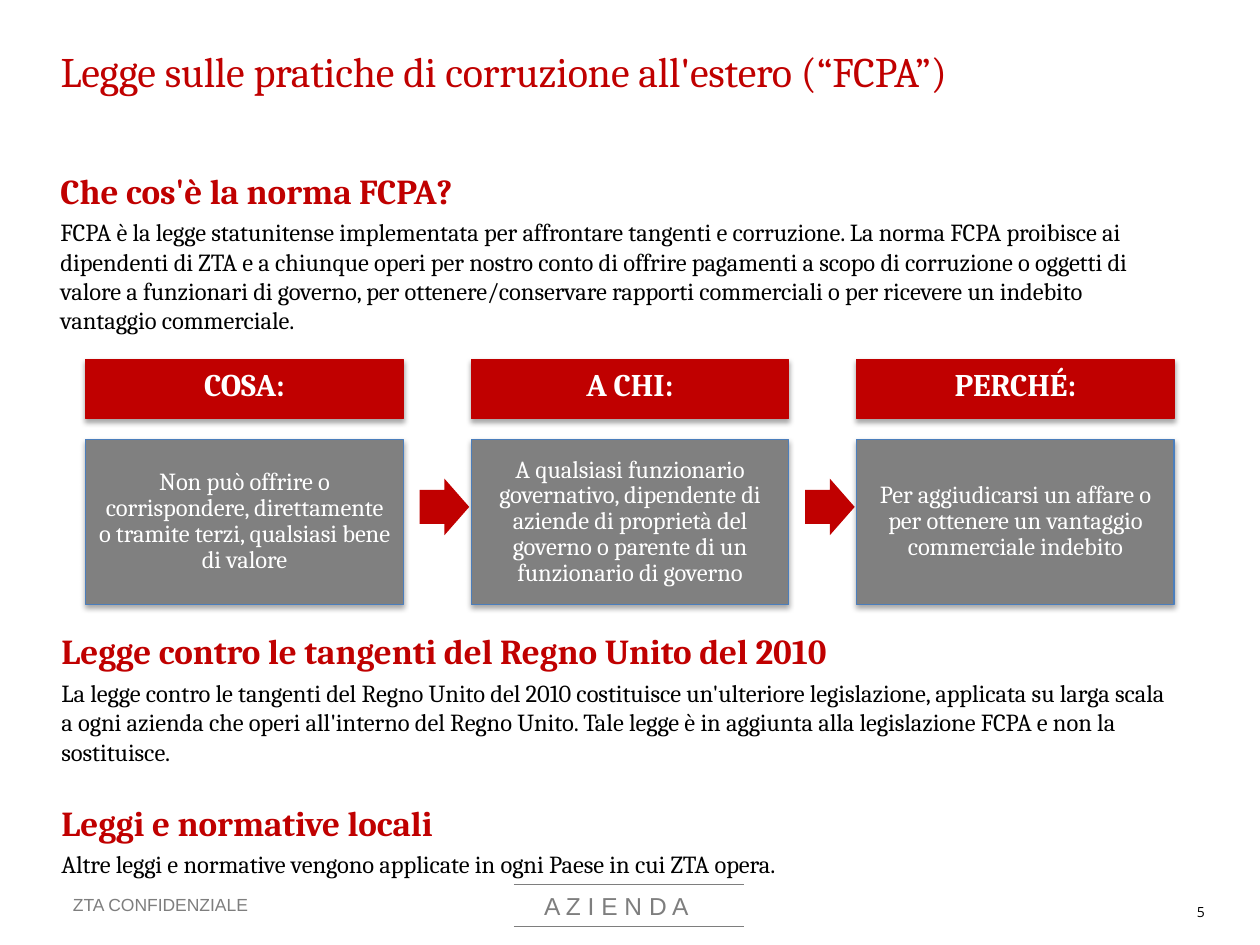
"""Build the slide on the FCPA and related anti-corruption laws."""
from lxml import etree
from pptx import Presentation
from pptx.dml.color import RGBColor
from pptx.enum.shapes import MSO_CONNECTOR as Connector, MSO_SHAPE as Shape
from pptx.enum.text import MSO_ANCHOR as Anchor, PP_ALIGN as Align
from pptx.oxml import parse_xml
from pptx.oxml.ns import nsdecls, qn
from pptx.util import Cm, Pt

RED = RGBColor(0xC0, 0x00, 0x00)
GREY = RGBColor(0x80, 0x80, 0x80)
FOOTER_GREY = RGBColor(0x7E, 0x7E, 0x7E)
BLUE = RGBColor(0x4B, 0x7E, 0xBC)
BLACK = RGBColor(0x00, 0x00, 0x00)
WHITE = RGBColor(0xFF, 0xFF, 0xFF)

TITLE = "Legge sulle pratiche di corruzione all'estero (“FCPA”)"
FCPA_SECTION = [
    ("Che cos'è la norma FCPA?",
     "FCPA è la legge statunitense implementata per affrontare tangenti e corruzione. "
     "La norma FCPA proibisce ai dipendenti di ZTA e a chiunque operi per nostro conto di "
     "offrire pagamenti a scopo di corruzione o oggetti di valore a funzionari di governo, "
     "per ottenere/conservare rapporti commerciali o per ricevere un indebito vantaggio "
     "commerciale."),
]
OTHER_SECTIONS = [
    ("Legge contro le tangenti del Regno Unito del 2010",
     "La legge contro le tangenti del Regno Unito del 2010 costituisce un'ulteriore "
     "legislazione, applicata su larga scala a ogni azienda che operi all'interno del Regno "
     "Unito. Tale legge è in aggiunta alla legislazione FCPA e non la sostituisce."),
    ("Leggi e normative locali",
     "Altre leggi e normative vengono applicate in ogni Paese in cui ZTA opera."),
]
STEPS = [
    ("COSA:", "Non può offrire o corrispondere, direttamente o tramite terzi, "
              "qualsiasi bene di valore"),
    ("A CHI:", "A qualsiasi funzionario governativo, dipendente di aziende di proprietà "
               "del governo o parente di un funzionario di governo"),
    ("PERCHÉ:", "Per aggiudicarsi un affare o per ottenere un vantaggio commerciale indebito"),
]
FOOTER = [
    ("A Z I E N D A", 10.97, 17.96, 3.28, 0.64, 14),
    ("ZTA CONFIDENZIALE", 1.47, 18.03, 3.9, 0.46, 10),
]
RULE_LEFT, RULE_RIGHT, RULE_TOPS = 10.36, 14.99, (17.83, 18.67)
STEP_LEFT, STEP_PITCH, STEP_WIDTH = 1.73, 7.77, 6.4
HEADER_TOP, HEADER_HEIGHT = 7.25, 1.19
CARD_TOP, CARD_HEIGHT = 8.86, 3.33
ARROW_GAP, ARROW_TOP, ARROW_WIDTH, ARROW_HEIGHT = 0.33, 9.65, 1, 1.14

SHADOW = (
    f'<a:effectLst {nsdecls("a")}><a:outerShdw blurRad="39370" dist="22860" dir="5400000" '
    'rotWithShape="0"><a:srgbClr val="000000"><a:alpha val="35000"/></a:srgbClr>'
    '</a:outerShdw></a:effectLst>'
)


def write(paragraph, text, size, color, font="Cambria", bold=False, tracking=-5):
    run = paragraph.add_run()
    run.text = text
    run._r.get_or_add_rPr().set("spc", str(tracking))
    paragraph.font.name = font
    paragraph.font.size = Pt(size)
    paragraph.font.bold = bold
    paragraph.font.color.rgb = color


def clear_margins(frame, top=0):
    frame.margin_left = frame.margin_right = frame.margin_bottom = 0
    frame.margin_top = Cm(top)


def add_text_frame(slide, left, top, width, height, inset=0):
    frame = slide.shapes.add_textbox(Cm(left), Cm(top), Cm(width), Cm(height)).text_frame
    frame.word_wrap = True
    clear_margins(frame, inset)
    return frame


def add_sections(slide, sections, left, top, width, height):
    frame = add_text_frame(slide, left, top, width, height, 0.36)
    for index, (heading, body) in enumerate(sections):
        paragraph = frame.add_paragraph() if index else frame.paragraphs[0]
        if index:
            paragraph.space_before = Pt(20)
        write(paragraph, heading, 20, RED, bold=True)
        paragraph = frame.add_paragraph()
        paragraph.space_before = Pt(3.5)
        write(paragraph, body, 14, BLACK)


def add_box(slide, text, left, top, height, fill, line, size, bold, spacing):
    box = slide.shapes.add_shape(Shape.RECTANGLE, Cm(left), Cm(top), Cm(STEP_WIDTH), Cm(height))
    box.fill.solid()
    box.fill.fore_color.rgb = fill
    box.line.color.rgb = line
    box.line.width = Pt(0.75)
    box._element.spPr.append(parse_xml(SHADOW))
    box.text_frame.vertical_anchor = Anchor.MIDDLE
    paragraph = box.text_frame.paragraphs[0]
    paragraph.alignment = Align.CENTER
    paragraph.line_spacing = spacing
    write(paragraph, text, size, WHITE, bold=bold)


def add_arrow(slide, left):
    arrow = slide.shapes.add_shape(
        Shape.RIGHT_ARROW, Cm(left), Cm(ARROW_TOP), Cm(ARROW_WIDTH), Cm(ARROW_HEIGHT))
    arrow.adjustments[0] = 0.6
    arrow.adjustments[1] = 0.5
    arrow.fill.solid()
    arrow.fill.fore_color.rgb = RED
    arrow.line.fill.background()
    arrow.shadow.inherit = False


def add_footer(slide):
    for top in RULE_TOPS:
        rule = slide.shapes.add_connector(
            Connector.STRAIGHT, Cm(RULE_LEFT), Cm(top), Cm(RULE_RIGHT), Cm(top))
        rule.line.color.rgb = FOOTER_GREY
        rule.line.width = Pt(0.5)
        etree.SubElement(rule._element.spPr, qn("a:effectLst"))
    for text, left, top, width, height, size in FOOTER:
        frame = add_text_frame(slide, left, top, width, height)
        write(frame.paragraphs[0], text, size, FOOTER_GREY, font="Arial", tracking=0)
    number = slide.shapes.add_textbox(Cm(23.88), Cm(18.08), Cm(0.66), Cm(0.61)).text_frame
    number.word_wrap = False
    write(number.paragraphs[0], "5", 8, BLACK, font="Open Sans", tracking=0)


def main():
    presentation = Presentation()
    presentation.slide_width, presentation.slide_height = Cm(25.4), Cm(19.05)
    slide = presentation.slides.add_slide(presentation.slide_layouts[5])

    title = slide.shapes.title
    title.left, title.top, title.width, title.height = Cm(1.22), Cm(0.86), Cm(20.47), Cm(1.09)
    clear_margins(title.text_frame, 0.06)
    title.text_frame.vertical_anchor = Anchor.TOP
    paragraph = title.text_frame.paragraphs[0]
    paragraph.alignment = Align.LEFT
    write(paragraph, TITLE, 24, RED, tracking=-10)

    add_sections(slide, FCPA_SECTION, 1.22, 3.05, 21.67, 3.58)
    add_sections(slide, OTHER_SECTIONS, 1.24, 12.34, 22.5, 5.26)
    for index, (header, body) in enumerate(STEPS):
        left = STEP_LEFT + index * STEP_PITCH
        add_box(slide, header, left, HEADER_TOP, HEADER_HEIGHT, RED, RED, 18, True, Pt(15.8))
        add_box(slide, body, left, CARD_TOP, CARD_HEIGHT, GREY, BLUE, 14, False, 0.88)
        if index < len(STEPS) - 1:
            add_arrow(slide, left + STEP_WIDTH + ARROW_GAP)
    add_footer(slide)
    presentation.save("out.pptx")


if __name__ == "__main__":
    main()
